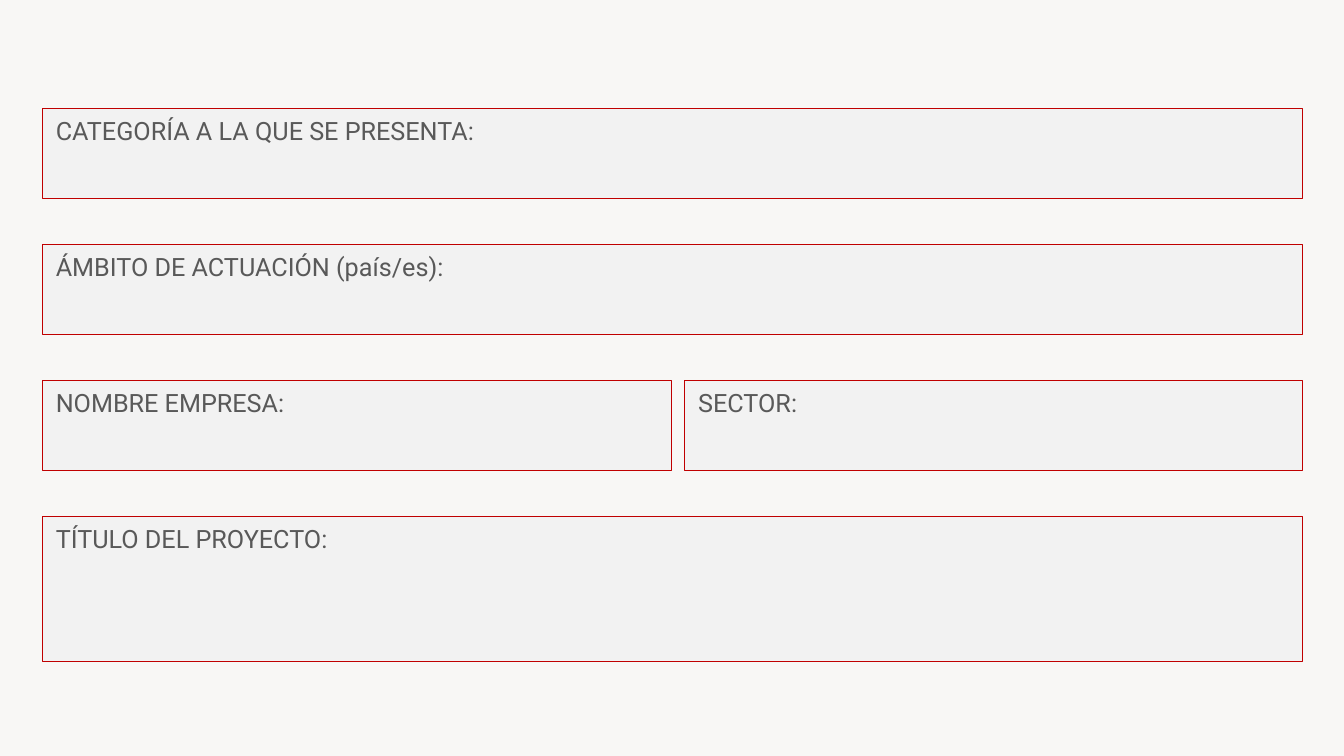
import dataclasses

import pptx
import pptx.dml.color
import pptx.enum.shapes
import pptx.enum.text
import pptx.slide
import pptx.util

EMU_PER_PX = 6096  # 150 px to the inch
SLIDE_WIDTH, SLIDE_HEIGHT = 2000, 1125

BACKGROUND = pptx.dml.color.RGBColor(0xF8, 0xF7, 0xF5)
FIELD_FILL = pptx.dml.color.RGBColor(0xF2, 0xF2, 0xF2)
FIELD_BORDER = pptx.dml.color.RGBColor(0xC0, 0x00, 0x00)
LABEL_COLOR = pptx.dml.color.RGBColor(0x59, 0x59, 0x59)

LEFT = 63
FULL_WIDTH = 1875
FIRST_ROW_TOP = 162
ROW_PITCH = 202
ROW_HEIGHT = 134
SECTOR_LEFT = 1019
COLUMN_GAP = 20
INSET_X, INSET_Y = 20, 10


@dataclasses.dataclass(frozen=True)
class Field:
    label: str
    row: int
    left: int = LEFT
    width: int = FULL_WIDTH
    height: int = ROW_HEIGHT


FIELDS = [
    Field("CATEGORÍA A LA QUE SE PRESENTA:", row=0),
    Field("ÁMBITO DE ACTUACIÓN (país/es):", row=1),
    Field("NOMBRE EMPRESA:", row=2, width=SECTOR_LEFT - COLUMN_GAP - LEFT),
    Field("SECTOR:", row=2, left=SECTOR_LEFT, width=LEFT + FULL_WIDTH - SECTOR_LEFT),
    Field("TÍTULO DEL PROYECTO:", row=3, height=217),
]


def px(length: int) -> pptx.util.Emu:
    return pptx.util.Emu(length * EMU_PER_PX)


def add_field(slide: pptx.slide.Slide, field: Field) -> None:
    shape = slide.shapes.add_shape(
        pptx.enum.shapes.MSO_SHAPE.RECTANGLE,
        px(field.left),
        px(FIRST_ROW_TOP + field.row * ROW_PITCH),
        px(field.width),
        px(field.height),
    )
    shape.shadow.inherit = False
    shape.fill.solid()
    shape.fill.fore_color.rgb = FIELD_FILL
    shape.line.color.rgb = FIELD_BORDER
    shape.line.width = pptx.util.Pt(0.75)

    text_frame = shape.text_frame
    text_frame.word_wrap = True
    text_frame.vertical_anchor = pptx.enum.text.MSO_ANCHOR.TOP
    text_frame.margin_left = text_frame.margin_right = px(INSET_X)
    text_frame.margin_top = text_frame.margin_bottom = px(INSET_Y)
    text_frame.text = field.label
    paragraph = text_frame.paragraphs[0]
    paragraph.alignment = pptx.enum.text.PP_ALIGN.LEFT
    font = paragraph.runs[0].font
    font.name = "Roboto"
    font.size = pptx.util.Pt(18)
    font.color.rgb = LABEL_COLOR


def main() -> None:
    presentation = pptx.Presentation()
    presentation.slide_width = px(SLIDE_WIDTH)
    presentation.slide_height = px(SLIDE_HEIGHT)
    blank_layout = presentation.slide_layouts.get_by_name("Blank")
    slide = presentation.slides.add_slide(blank_layout)
    slide.background.fill.solid()
    slide.background.fill.fore_color.rgb = BACKGROUND
    for field in FIELDS:
        add_field(slide, field)
    presentation.save("out.pptx")


if __name__ == "__main__":
    main()
